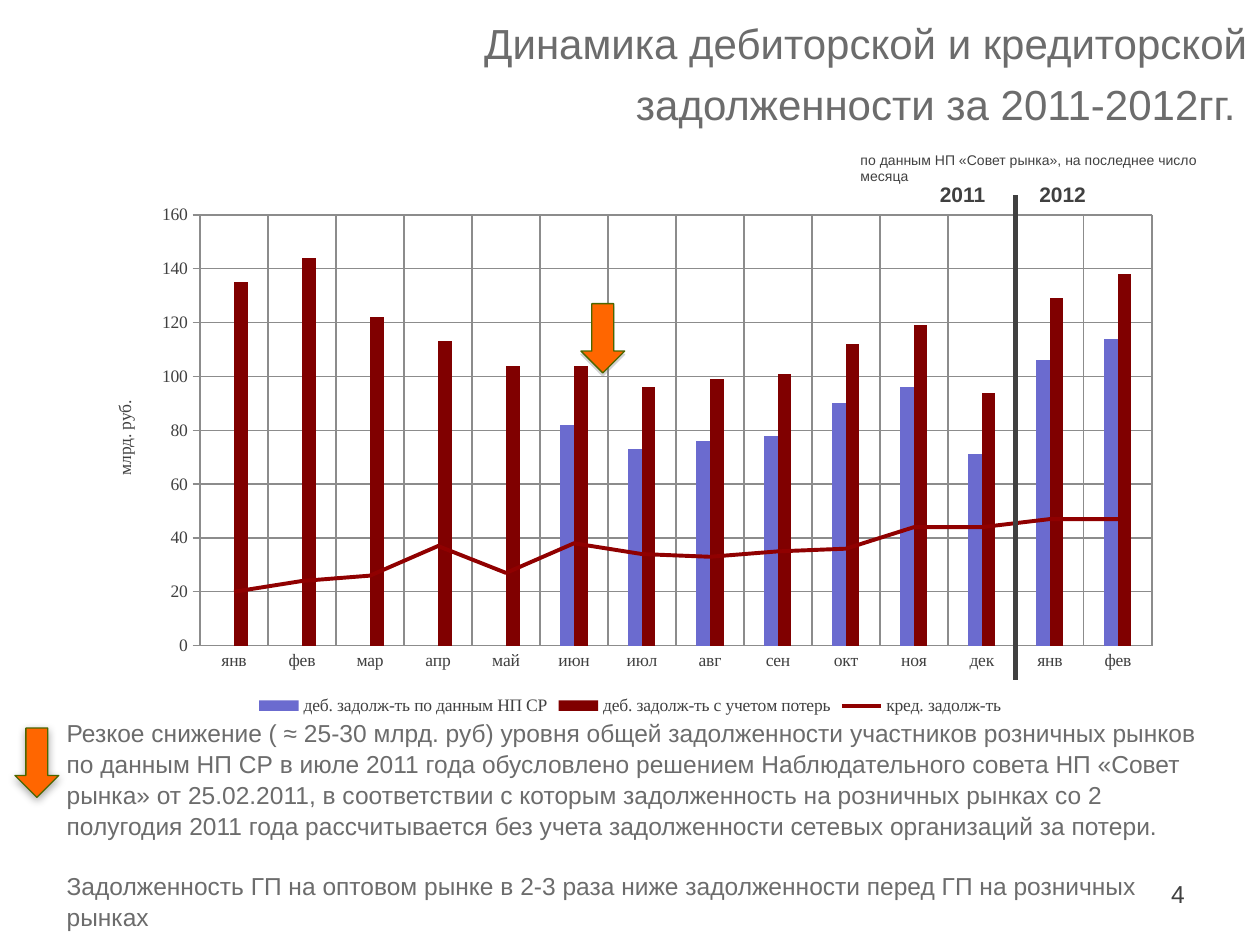
from pptx import Presentation
from pptx.chart.data import CategoryChartData
from pptx.dml.color import RGBColor
from pptx.enum.chart import XL_CHART_TYPE as CT, XL_LEGEND_POSITION as LP, XL_TICK_MARK as TM
from pptx.enum.shapes import MSO_CONNECTOR, MSO_SHAPE
from pptx.enum.text import MSO_ANCHOR, PP_ALIGN
from pptx.oxml import parse_xml
from pptx.oxml.ns import nsdecls, qn
from pptx.util import Pt

DARK = RGBColor(0x40, 0x40, 0x40)
GRAY = RGBColor(0x6C, 0x6C, 0x6C)
GRID = RGBColor(0x8C, 0x8C, 0x8C)
BLUE = RGBColor(0x6B, 0x6B, 0xCF)
MAROON = RGBColor(0x80, 0x00, 0x00)
RED = RGBColor(0x90, 0x00, 0x00)
ORANGE = RGBColor(0xFF, 0x66, 0x00)
OLIVE = RGBColor(0x4B, 0x66, 0x00)

MONTHS = ["янв", "фев", "мар", "апр", "май", "июн", "июл",
          "авг", "сен", "окт", "ноя", "дек", "янв", "фев"]
DEBTS = [
    ("деб. задолж-ть по данным НП СР",
     [None] * 5 + [82, 73, 76, 78, 90, 96, 71, 106, 114]),
    ("деб. задолж-ть с учетом потерь",
     [135, 144, 122, 113, 104, 104, 96, 99, 101, 112, 119, 94, 129, 138]),
    ("кред. задолж-ть",
     [20, 24, 26, 37, 27, 38, 34, 33, 35, 36, 44, 44, 47, 47]),
]
NOTES = [
    "Резкое снижение ( ≈ 25-30 млрд. руб) уровня общей задолженности участников "
    "розничных рынков по данным НП СР в июле 2011 года обусловлено решением "
    "Наблюдательного совета НП «Совет рынка» от 25.02.2011, в соответствии с которым "
    "задолженность на розничных рынках со 2 полугодия 2011 года рассчитывается без "
    "учета задолженности сетевых организаций за потери.",
    "Задолженность ГП на оптовом рынке в 2-3 раза ниже задолженности перед ГП "
    "на розничных рынках",
]


def write(tf, paragraphs, size=14, color=DARK, bold=False, align=PP_ALIGN.LEFT,
          spacing=1.0, gap=0, anchor=MSO_ANCHOR.TOP):
    tf.word_wrap = True
    tf.vertical_anchor = anchor
    for i, text in enumerate(paragraphs):
        p = tf.add_paragraph() if i else tf.paragraphs[0]
        p.alignment = align
        p.line_spacing = spacing
        p.space_before = Pt(gap if i else 0)
        r = p.add_run()
        r.text = text
        r.font.name = "Arial"
        r.font.size = Pt(size)
        r.font.bold = bold
        r.font.color.rgb = color


class Deck:
    def __init__(self, prs):
        self.s = prs.slides.add_slide(prs.slide_layouts[5])

    def title(self, box, text, **style):
        sp = self.s.shapes.title
        sp.left, sp.top, sp.width, sp.height = map(Pt, box)
        write(sp.text_frame, [text], **style)

    def text(self, box, *paragraphs, **style):
        write(self.s.shapes.add_textbox(*map(Pt, box)).text_frame, paragraphs, **style)

    def arrow(self, x, y, shade, blur):
        sp = self.s.shapes.add_shape(MSO_SHAPE.DOWN_ARROW, Pt(x), Pt(y), Pt(25), Pt(39.6))
        sp.fill.solid()
        sp.fill.fore_color.rgb = ORANGE
        sp.line.color.rgb = OLIVE
        sp.line.width = Pt(0.75)
        sp.shadow.inherit = False
        effects = sp._element.spPr.find(qn("a:effectLst"))
        effects.append(parse_xml(
            f'<a:outerShdw {nsdecls("a")} blurRad="{Pt(blur)}" dist="{Pt(1.8)}" '
            f'dir="5400000" rotWithShape="0"><a:srgbClr val="{shade}">'
            '<a:alpha val="35000"/></a:srgbClr></a:outerShdw>'))

    def line(self, x1, y1, x2, y2, color, width):
        c = self.s.shapes.add_connector(MSO_CONNECTOR.STRAIGHT, *map(Pt, (x1, y1, x2, y2)))
        c.line.color.rgb = color
        c.line.width = Pt(width)
        c._element.spPr.append(parse_xml(f'<a:effectLst {nsdecls("a")}/>'))

    def chart(self, box, categories, series):
        data = CategoryChartData()
        data.categories = categories
        for name, values in series:
            data.add_series(name, values)
        chart = self.s.shapes.add_chart(CT.COLUMN_CLUSTERED, *map(Pt, box), data).chart
        chart.has_title = False
        chart.font.name = "Times New Roman"
        chart.font.size = Pt(10)
        chart.font.color.rgb = DARK
        chart.has_legend = True
        chart.legend.position = LP.BOTTOM
        chart.legend.include_in_layout = False
        self.axes(chart)
        bars = chart.plots[0]
        bars.gap_width = 300
        bars.overlap = 0
        bars.vary_by_categories = False
        for ser, color in zip(bars.series, (BLUE, MAROON)):
            ser.format.fill.solid()
            ser.format.fill.fore_color.rgb = color
        self.last_as_line(chart)
        curve = chart.plots[1].series[0]
        curve.smooth = False
        curve.format.line.color.rgb = RED
        curve.format.line.width = Pt(2.25)

    def axes(self, chart):
        cat, val = chart.category_axis, chart.value_axis
        for axis in (cat, val):
            axis.has_major_gridlines = True
            axis.major_gridlines.format.line.color.rgb = GRID
            axis.major_gridlines.format.line.width = Pt(0.75)
            axis.format.line.color.rgb = GRID
            axis.minor_tick_mark = TM.NONE
        cat.major_tick_mark = TM.NONE
        val.major_tick_mark = TM.CROSS
        val.minimum_scale, val.maximum_scale, val.major_unit = 0, 160, 20
        val.has_title = True
        p = val.axis_title.text_frame.paragraphs[0]
        r = p.add_run()
        r.text = "млрд. руб."
        r.font.name = "Times New Roman"
        r.font.size = Pt(10)
        r.font.bold = False
        r.font.color.rgb = DARK

    def last_as_line(self, chart):
        bar = chart.plots[0]._element
        ser = bar.findall(qn("c:ser"))[-1]
        for flag in ser.findall(qn("c:invertIfNegative")):
            ser.remove(flag)
        ids = "".join(f'<c:axId val="{a.get("val")}"/>' for a in bar.findall(qn("c:axId")))
        curve = parse_xml(
            f'<c:lineChart {nsdecls("c")}><c:grouping val="standard"/>'
            f'<c:varyColors val="0"/><c:marker val="1"/>{ids}</c:lineChart>')
        curve.insert(2, ser)
        ser.find(qn("c:tx")).addnext(parse_xml(
            f'<c:marker {nsdecls("c")}><c:symbol val="none"/></c:marker>'))
        bar.addnext(curve)
        area = bar.getparent()
        for old in area.findall(qn("c:layout")):
            area.remove(old)
        place = "".join(f'<c:{k} val="{v}"/>' for k, v in (
            ("layoutTarget", "inner"), ("xMode", "edge"), ("yMode", "edge"),
            ("x", 0.105), ("y", 0.0375), ("w", 0.8745), ("h", 0.82)))
        area.insert(0, parse_xml(
            f'<c:layout {nsdecls("c")}><c:manualLayout>{place}</c:manualLayout></c:layout>'))


def main():
    prs = Presentation()
    prs.slide_width, prs.slide_height = Pt(720), Pt(540)
    deck = Deck(prs)
    deck.text((516, 492, 168, 37), "4", align=PP_ALIGN.RIGHT, anchor=MSO_ANCHOR.MIDDLE)
    deck.chart((49, 111.6, 622, 300.2), MONTHS, DEBTS)
    deck.title((156, 0, 564, 78), "Динамика дебиторской и кредиторской задолженности за 2011-2012гг. ",
               size=24, color=GRAY, align=PP_ALIGN.RIGHT, spacing=1.2,
               anchor=MSO_ANCHOR.MIDDLE)
    deck.text((31, 406, 669, 126), *NOTES, color=GRAY, spacing=1.05, gap=17)
    deck.text((484.6, 82.8, 217.4, 25), "по данным НП «Совет рынка», на последнее число месяца", size=8)
    deck.arrow(332, 173.5, "808080", 0)
    deck.line(580.3, 111.6, 580.3, 388.8, DARK, 2.5)
    for x, year in ((530, "2011"), (586.8, "2012")):
        deck.text((x, 100, 41, 21.6), year, size=12, bold=True)
    deck.arrow(8.6, 416, "000000", 5)
    prs.save("out.pptx")


if __name__ == "__main__":
    main()
